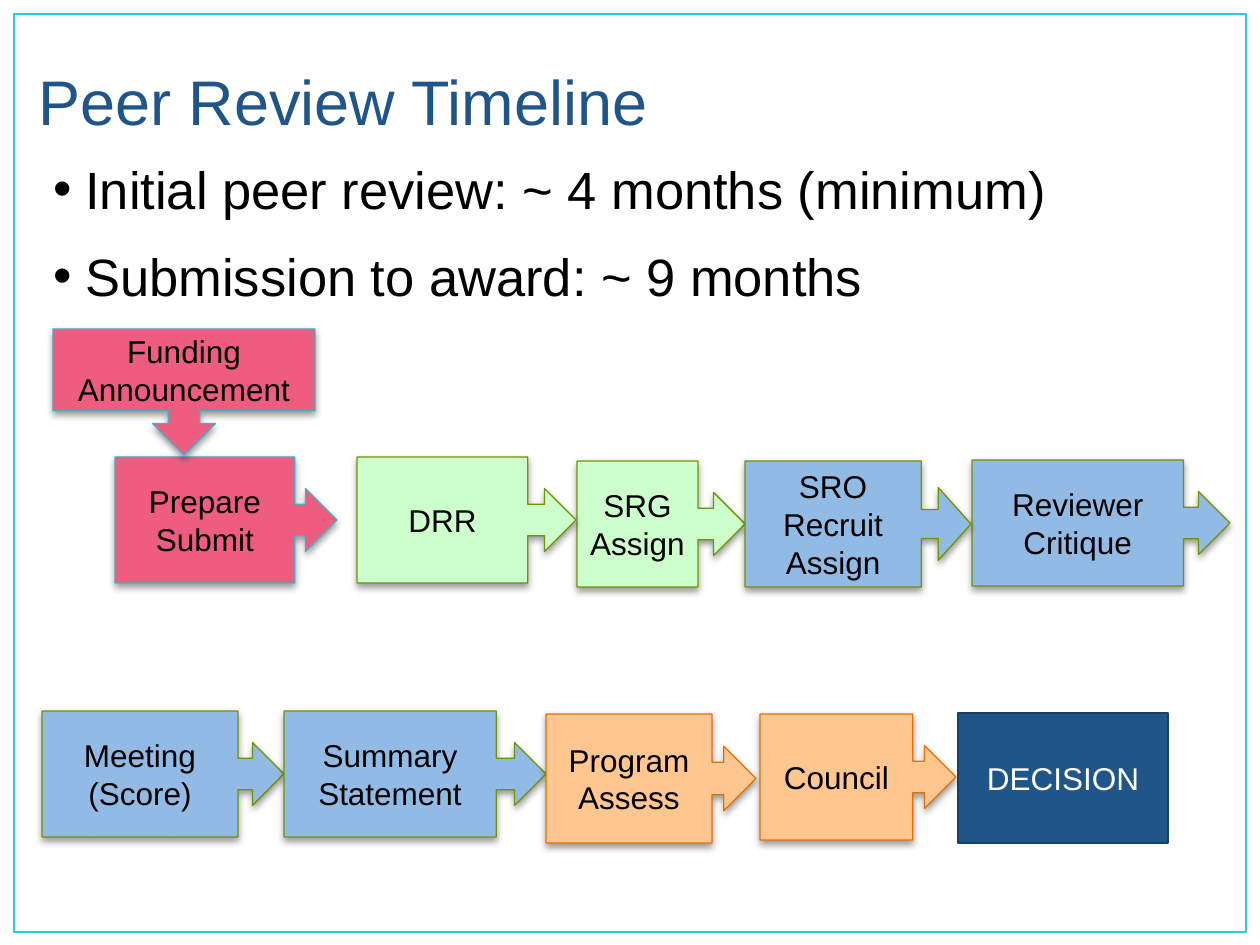
from dataclasses import dataclass

from lxml.etree import SubElement
from pptx import Presentation
from pptx.dml.color import RGBColor
from pptx.enum.shapes import MSO_SHAPE as Shape
from pptx.enum.text import MSO_ANCHOR as Anchor, PP_ALIGN as Align
from pptx.oxml.ns import qn
from pptx.util import Emu, Pt


@dataclass(frozen=True)
class Theme:
    font: str = "Arial"
    title_size: int = 36
    bullet_size: int = 30
    step_size: int = 18
    ink: str = "000000"
    white: str = "FFFFFF"
    navy: str = "20558A"
    navy_line: str = "183F66"
    frame: str = "27CED7"
    # Fill and line of each stage of the review
    applicant: tuple = ("EE5D7F", "4BACC6")
    referral: tuple = ("CCFFCC", "719500")
    review: tuple = ("91BBE5", "719500")
    council: tuple = ("FFC78F", "E57200")


def px(length):
    return Emu(round(length * 914400 / 126))


class SlideBuilder:
    def __init__(self, page, theme):
        self.page = page
        self.theme = theme

    def add_span(self, para, text, size, color):
        span = para.add_run()
        span.text = text
        span.font.name = self.theme.font
        span.font.size = Pt(size)
        span.font.color.rgb = RGBColor.from_string(color)

    def text_box(self, left, top, width, height, anchor=Anchor.TOP):
        frame = self.page.shapes.add_textbox(
            px(left), px(top), px(width), px(height)).text_frame
        frame.word_wrap = True
        frame.vertical_anchor = anchor
        return frame

    def title(self, text, *place):
        frame = self.text_box(*place, anchor=Anchor.MIDDLE)
        self.add_span(frame.paragraphs[0], text, self.theme.title_size, self.theme.navy)

    def bullets(self, lines, *place):
        frame = self.text_box(*place)
        for index, line in enumerate(lines):
            para = frame.paragraphs[0] if index == 0 else frame.add_paragraph()
            props = para._p.get_or_add_pPr()
            props.set("marL", str(px(47)))
            props.set("indent", str(px(-32)))
            SubElement(props, qn("a:buFont"), typeface=self.theme.font)
            SubElement(props, qn("a:buChar"), char="•")
            para.space_after = Pt(13.5)
            self.add_span(para, line, self.theme.bullet_size, self.theme.ink)

    def shape(self, kind, left, top, width, height, fill, line, weight):
        shape = self.page.shapes.add_shape(
            kind, px(left), px(top), px(width), px(height))
        if fill:
            shape.fill.solid()
            shape.fill.fore_color.rgb = RGBColor.from_string(fill)
        else:
            shape.fill.background()
        shape.line.color.rgb = RGBColor.from_string(line)
        shape.line.width = Pt(weight)
        shape.shadow.inherit = False
        return shape

    def label(self, shape, lines, color):
        frame = shape.text_frame
        frame.word_wrap = True
        frame.vertical_anchor = Anchor.MIDDLE
        for index, line in enumerate(lines):
            para = frame.paragraphs[0] if index == 0 else frame.add_paragraph()
            para.alignment = Align.CENTER
            self.add_span(para, line, self.theme.step_size, color)

    def drop_shadow(self, shape):
        effects = shape._element.spPr.find(qn("a:effectLst"))
        shadow = SubElement(effects, qn("a:outerShdw"), blurRad=str(Pt(4.1)),
                            dist=str(Pt(2)), dir="5400000", rotWithShape="0")
        color = SubElement(shadow, qn("a:srgbClr"), val=self.theme.ink)
        SubElement(color, qn("a:alpha"), val="40000")

    def callout(self, lines, stage, place, body, kind=Shape.RIGHT_ARROW_CALLOUT,
                arrow=(0.25, 0.25, 0.25)):
        shape = self.shape(kind, *place, *stage, 0.75)
        for index, value in enumerate((*arrow, body)):
            shape.adjustments[index] = value
        self.drop_shadow(shape)
        self.label(shape, lines, self.theme.ink)


def main():
    deck = Presentation()
    deck.slide_width, deck.slide_height = px(1260), px(945)
    theme = Theme()
    builder = SlideBuilder(deck.slides.add_slide(deck.slide_layouts[6]), theme)

    # Frame, heading and durations
    builder.shape(Shape.RECTANGLE, 14, 14, 1232, 918, None, theme.frame, 1.5)
    builder.bullets(["Initial peer review: ~ 4 months (minimum)",
                     "Submission to award: ~ 9 months"], 26, 151, 1124, 161)
    builder.title("Peer Review Timeline", 26, 42, 1218, 116)

    # Review steps: lines, stage, place, share of the width taken by the body
    steps = [
        (["SRG", "Assign"], theme.referral, (577, 461, 168, 126), 0.72),
        (["DRR"], theme.referral, (357, 457, 219, 126), 0.78),
        (["Prepare", "Submit"], theme.applicant, (115, 457, 222, 126), 0.81),
        (["Reviewer", "Critique"], theme.review, (972, 460, 258, 126), 0.82),
        (["Meeting", "(Score)"], theme.review, (42, 711, 242, 126), 0.81),
        (["Summary Statement"], theme.review, (284, 711, 262, 126), 0.81),
        (["Program", "Assess"], theme.council, (546, 714, 210, 129), 0.79),
        (["Council"], theme.council, (760, 714, 196, 126), 0.78),
    ]
    for step in steps:
        builder.callout(*step)
    builder.callout(["SRO", "Recruit", "Assign"], theme.review,
                    (745, 461, 226, 126), 0.78, arrow=(0.23, 0.29, 0.26))

    # Start and end of the process
    builder.callout(["Funding Announcement"], theme.applicant,
                    (53, 329, 262, 126), 0.65, kind=Shape.DOWN_ARROW_CALLOUT)
    decision = builder.shape(Shape.RECTANGLE, 958, 713, 210, 130,
                             theme.navy, theme.navy_line, 1.5)
    builder.label(decision, ["DECISION"], theme.white)

    deck.save("out.pptx")


if __name__ == "__main__":
    main()
